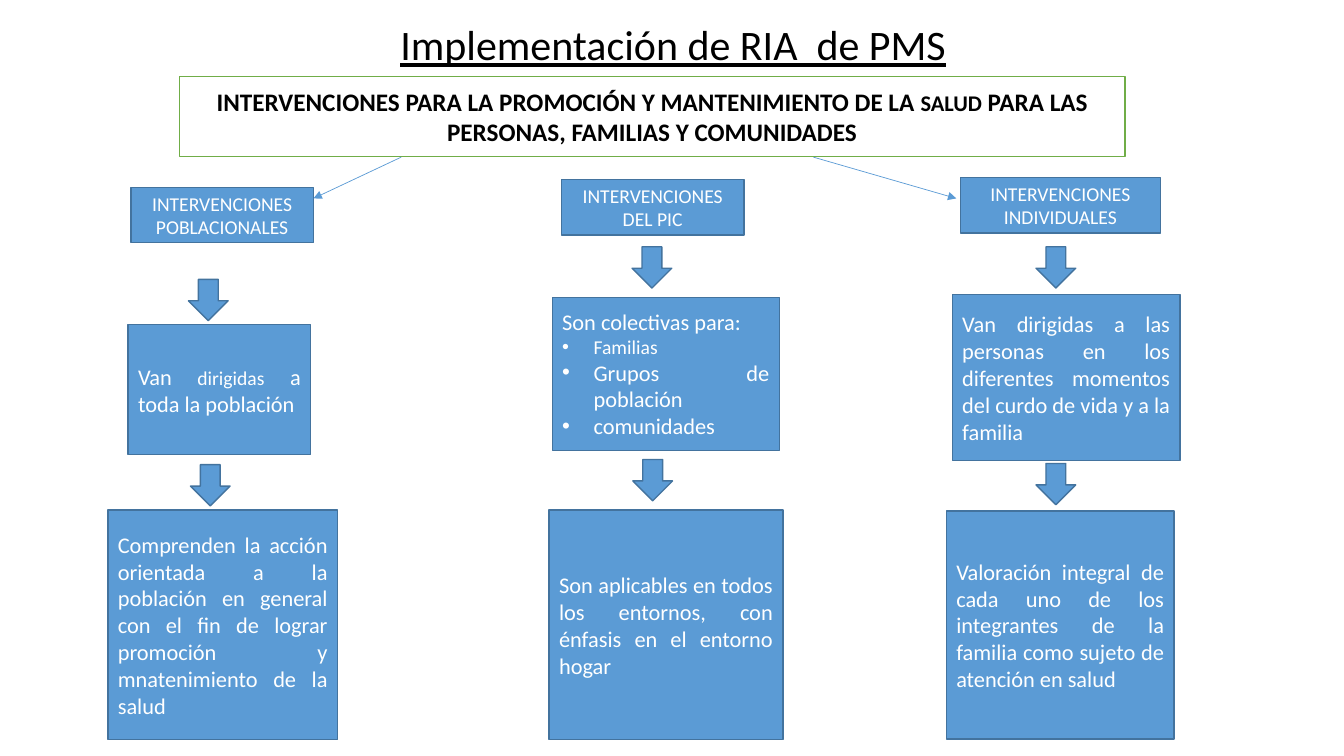
from lxml import etree
from pptx import Presentation
from pptx.dml.color import RGBColor
from pptx.enum.shapes import MSO_CONNECTOR, MSO_SHAPE
from pptx.enum.text import MSO_ANCHOR, PP_ALIGN
from pptx.oxml.ns import qn
from pptx.util import Cm, Pt

RECT, DOWN = MSO_SHAPE.RECTANGLE, MSO_SHAPE.DOWN_ARROW
LINE = MSO_CONNECTOR.STRAIGHT
MID = MSO_ANCHOR.MIDDLE
CENTER, JUST = PP_ALIGN.CENTER, PP_ALIGN.JUSTIFY

BLUE, EDGE, GREEN = "5B9BD5", "43739E", "70AD47"
WHITE, BLACK = "FFFFFF", "000000"


def color(code):
    return RGBColor.from_string(code)


class Deck:
    """Holds the presentation, its style and the current slide."""

    def __init__(self):
        self.prs = Presentation()
        self.prs.slide_width, self.prs.slide_height = Cm(33.87), Cm(19.05)
        self.slide = self.prs.slides.add_slide(self.prs.slide_layouts[5])
        self.shapes = self.slide.shapes

    def label(self, frame, paras, align, ink, **style):
        """Fill a frame; each paragraph is (bulleted, [(text, size), ...])."""
        frame.word_wrap = True
        frame.vertical_anchor = MID
        for i, (mark, runs) in enumerate(paras):
            para = frame.add_paragraph() if i else frame.paragraphs[0]
            para.alignment = align
            if mark:
                self.bullet(para)
            for text, size in runs:
                run = para.add_run()
                run.text = text
                run.font.color.rgb = color(ink)
                look = {"name": "Calibri", "size": Pt(size), **style}
                for key, value in look.items():
                    setattr(run.font, key, value)

    def bullet(self, para):
        props = para._p.get_or_add_pPr()
        props.set("marL", str(Cm(0.79)))
        props.set("indent", str(-Cm(0.79)))
        etree.SubElement(props, qn("a:buFont")).set("typeface", "Arial")
        etree.SubElement(props, qn("a:buChar")).set("char", "•")

    def title(self, text, box):
        head = self.shapes.title
        for key, value in zip(("left", "top", "width", "height"), box):
            setattr(head, key, Cm(value))
        self.label(head.text_frame, [(False, [(text, 30)])], CENTER, BLACK,
                   underline=True)

    def shape(self, kind, box, fill=BLUE, edge=EDGE):
        shape = self.shapes.add_shape(kind, *map(Cm, box))
        shape.shadow.inherit = False
        shape.fill.solid()
        shape.fill.fore_color.rgb = color(fill)
        shape.line.color.rgb = color(edge)
        shape.line.width = Pt(1)
        return shape

    def box(self, box, paras, align=JUST):
        self.label(self.shape(RECT, box).text_frame, paras, align, WHITE)

    def banner(self, box, runs):
        shape = self.shape(RECT, box, WHITE, GREEN)
        self.label(shape.text_frame, [(False, runs)], CENTER, BLACK, bold=True)

    def arrow(self, *ends):
        link = self.shapes.add_connector(LINE, *map(Cm, ends))
        link.line.color.rgb = color(BLUE)
        link.line.width = Pt(0.5)
        props = link._element.spPr
        tip = etree.SubElement(props.get_or_add_ln(), qn("a:tailEnd"))
        tip.set("type", "triangle")
        etree.SubElement(props, qn("a:effectLst"))


def plain(text, size=16):
    return [(False, [(text, size)])]


# Each column: heading, target group and scope boxes, then its down arrows
COLUMNS = [
    (((3.3, 4.72, 4.6, 1.4), "INTERVENCIONES POBLACIONALES"),
     ((3.23, 8.18, 4.6, 3.28),
      [(False, [("Van ", 16), ("dirigidas", 14),
                (" a toda la población", 16)])]),
     ((2.72, 12.85, 5.79, 5.79),
      "Comprenden la acción orientada a la población en general con el fin "
      "de lograr promoción y mnatenimiento de la salud"),
     [(4.75, 7.04), (4.8, 11.71)]),
    (((14.15, 4.52, 4.6, 1.4), "INTERVENCIONES DEL PIC"),
     ((13.92, 7.49, 5.72, 3.86),
      [(False, [("Son colectivas para:", 16)]),
       (True, [("Familias", 14)]),
       (True, [("Grupos de población", 16)]),
       (True, [("comunidades", 16)])]),
     ((13.84, 12.85, 5.89, 5.79),
      "Son aplicables en todos los entornos, con énfasis en el entorno hogar"),
     [(15.93, 6.22), (15.95, 11.58)]),
    (((24.21, 4.47, 5.03, 1.4), "INTERVENCIONES INDIVIDUALES"),
     ((24, 7.42, 5.74, 4.19),
      plain("Van dirigidas a las personas en los diferentes momentos del "
            "curdo de vida y a la familia")),
     ((23.85, 12.88, 5.74, 5.74),
      "Valoración integral de cada uno de los integrantes de la familia como "
      "sujeto de atención en salud"),
     [(26.11, 6.22), (26.11, 11.68)]),
]


def main():
    deck = Deck()
    deck.title("Implementación de RIA  de PMS", (1.73, 0.33, 30.48, 1.55))
    deck.banner((4.52, 1.93, 23.83, 2.01), [
        ("INTERVENCIONES PARA LA PROMOCIÓN Y MANTENIMIENTO DE LA ", 18),
        ("SALUD", 16),
        (" PARA LAS PERSONAS, FAMILIAS Y COMUNIDADES", 18)])
    for (top, name), (mid, group), (low, scope), downs in COLUMNS:
        deck.box(top, plain(name, 14), CENTER)
        deck.box(mid, group)
        deck.box(low, plain(scope))
        for x, y in downs:
            deck.shape(DOWN, (x, y, 1, 1.04))
    deck.arrow(20.5, 3.96, 24.1, 5)
    deck.arrow(10.11, 3.96, 7.9, 5)
    deck.prs.save("out.pptx")


if __name__ == "__main__":
    main()
